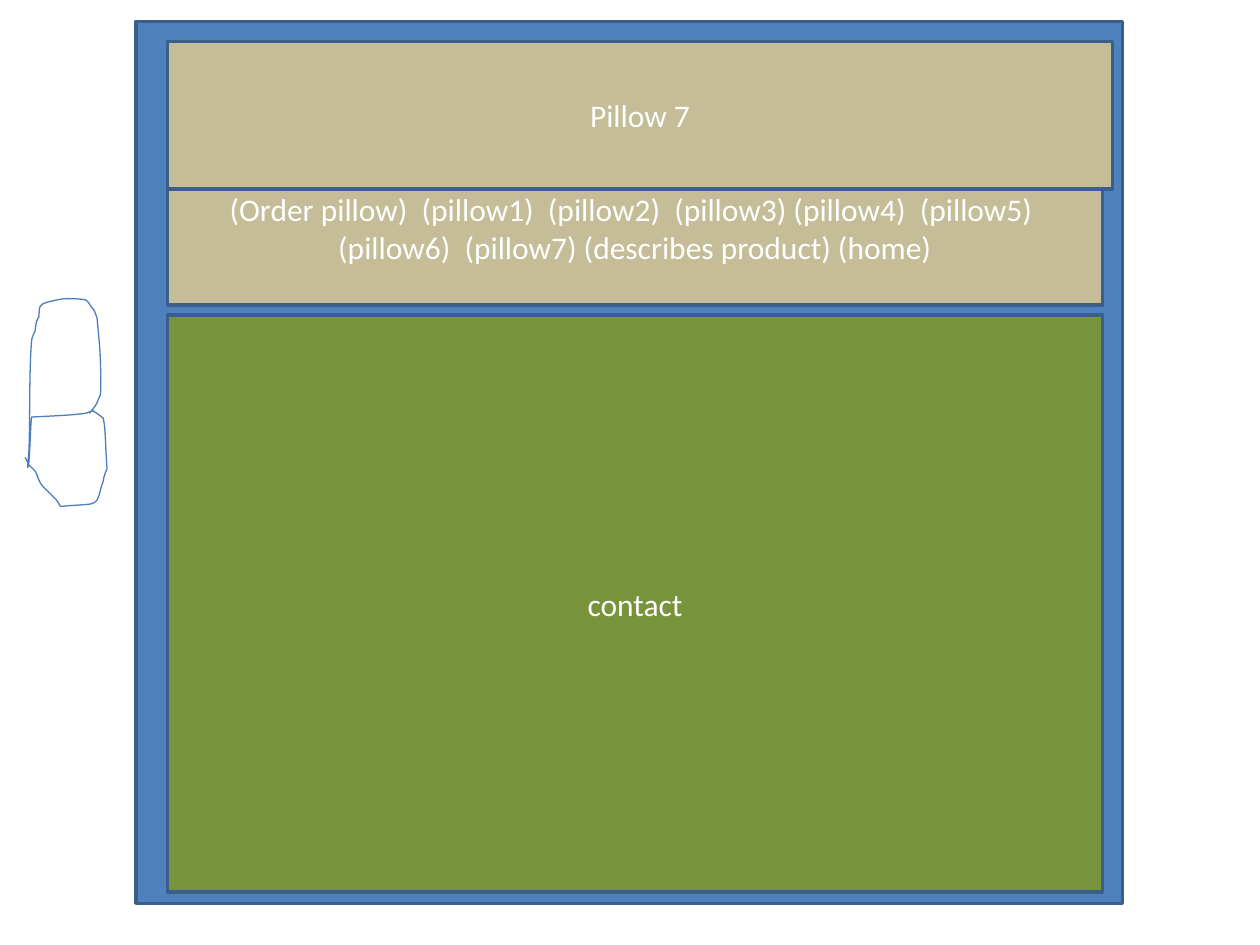
"""Builds a page wireframe of stacked panels beside a hand-drawn letter B."""
from lxml import etree
from pptx import Presentation
from pptx.dml.color import RGBColor
from pptx.enum.shapes import MSO_SHAPE
from pptx.enum.text import MSO_ANCHOR, PP_ALIGN
from pptx.oxml.ns import qn
from pptx.util import Inches, Pt

RECT = MSO_SHAPE.RECTANGLE
MIDDLE = MSO_ANCHOR.MIDDLE
CENTER = PP_ALIGN.CENTER

THEME = {
    "frame": "4F81BD", "tan": "C4BD97", "green": "77933C",
    "border": "3A5F8C", "ink": "4B7EBC", "text": "FFFFFF",
    "font": "Calibri", "size": 18, "border_width": 2, "ink_width": 0.75,
}

MENU = ("(Order pillow)  (pillow1)  (pillow2)  (pillow3) (pillow4)  (pillow5)  "
        "(pillow6)  (pillow7) (describes product) (home)")
LEFT = 1.33
INSET = 0.05
PANELS = [
    ("", "frame", (1.08, 0.17, 7.83, 7), (INSET, INSET)),
    ("Pillow 7", "tan", (LEFT, 0.33, 7.5, 1.17), (INSET, INSET)),
    (MENU, "tan", (LEFT, 1.5, 7.42, 0.92), (0, 0.3)),
    ("contact", "green", (LEFT, 2.5, 7.42, 4.58), (INSET, INSET)),
]

STROKE_START = (0.2, 3.63)
STROKE = [
    (0.21, 3.65, 0.22, 3.67, 0.23, 3.69), (0.24, 3.71, 0.27, 3.72, 0.28, 3.74),
    (0.3, 3.78, 0.31, 3.83, 0.34, 3.86), (0.42, 3.94),
    (0.43, 3.95, 0.44, 3.96, 0.45, 3.97), (0.48, 4.02),
    (0.56, 4.01, 0.64, 4.01, 0.72, 4), (0.74, 4, 0.76, 3.98, 0.77, 3.97),
    (0.79, 3.94, 0.8, 3.86, 0.82, 3.82), (0.82, 3.78, 0.85, 3.72, 0.85, 3.72),
    (0.84, 3.61, 0.84, 3.5, 0.83, 3.38), (0.83, 3.36, 0.82, 3.34, 0.82, 3.32),
    (0.8, 3.3, 0.75, 3.27, 0.74, 3.26), (0.72, 3.27, 0.7, 3.27, 0.68, 3.28),
    (0.52, 3.3, 0.42, 3.3, 0.25, 3.31), (0.24, 3.43, 0.24, 3.54, 0.23, 3.66),
    (0.23, 3.68, 0.22, 3.72, 0.22, 3.71), (0.22, 3.66, 0.23, 3.62, 0.23, 3.57),
    (0.24, 3.28, 0.23, 2.99, 0.25, 2.71), (0.25, 2.68, 0.27, 2.65, 0.28, 2.62),
    (0.28, 2.59, 0.29, 2.57, 0.29, 2.55), (0.3, 2.54, 0.3, 2.52, 0.31, 2.51),
    (0.31, 2.48, 0.31, 2.45, 0.32, 2.43), (0.33, 2.41, 0.35, 2.41, 0.37, 2.4),
    (0.4, 2.39, 0.5, 2.37, 0.52, 2.37), (0.57, 2.37, 0.63, 2.37, 0.68, 2.38),
    (0.7, 2.39, 0.71, 2.41, 0.72, 2.43), (0.76, 2.47, 0.75, 2.48, 0.77, 2.52),
    (0.79, 2.74, 0.8, 2.8, 0.8, 3.08), (0.8, 3.11, 0.8, 3.14, 0.78, 3.17),
    (0.76, 3.23, 0.74, 3.24, 0.71, 3.28),
]


def color(name):
    return RGBColor.from_string(THEME[name])


def outline(s, name, width):
    s.shadow.inherit = False
    s.line.color.rgb = color(name)
    s.line.width = Pt(THEME[width])


def add_panel(slide, text, fill, box, insets):
    s = slide.shapes.add_shape(RECT, *map(Inches, box))
    s.fill.solid()
    s.fill.fore_color.rgb = color(fill)
    outline(s, "border", "border_width")
    if not text:
        return
    tf = s.text_frame
    tf.word_wrap = True
    tf.vertical_anchor = MIDDLE
    tf.margin_top, tf.margin_bottom = map(Inches, insets)
    p = tf.paragraphs[0]
    p.alignment = CENTER
    r = p.add_run()
    r.text = text
    r.font.name = THEME["font"]
    r.font.size = Pt(THEME["size"])
    r.font.color.rgb = color("text")


def bend_segments(s, parts):
    segments = list(s.element.iter(qn("a:lnTo")))
    for segment, part in zip(segments, parts):
        if len(part) == 2:
            continue
        curve = etree.Element(qn("a:cubicBezTo"))
        for x, y in zip(part[::2], part[1::2]):
            pt = etree.SubElement(curve, qn("a:pt"))
            pt.set("x", str(Inches(x) - s.left))
            pt.set("y", str(Inches(y) - s.top))
        segment.getparent().replace(segment, curve)


def add_letter(slide):
    builder = slide.shapes.build_freeform(*map(Inches, STROKE_START))
    ends = [tuple(map(Inches, part[-2:])) for part in STROKE]
    builder.add_line_segments(ends, close=False)
    s = builder.convert_to_shape()
    bend_segments(s, STROKE)
    s.fill.background()
    outline(s, "ink", "ink_width")


def main():
    prs = Presentation()
    prs.slide_width, prs.slide_height = Inches(10), Inches(7.5)
    slide = prs.slides.add_slide(prs.slide_layouts[6])
    for panel in PANELS:
        add_panel(slide, *panel)
    add_letter(slide)
    prs.save("out.pptx")


if __name__ == "__main__":
    main()
